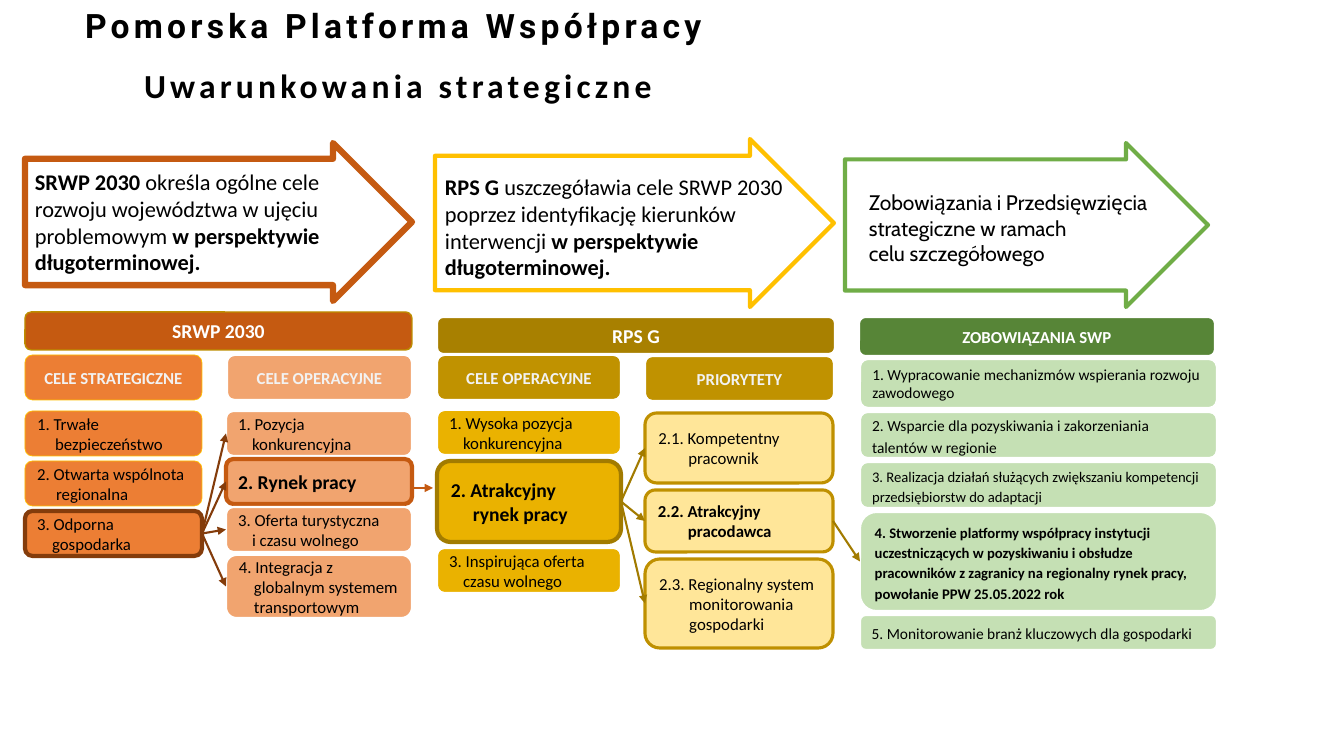
from lxml import etree
from pptx import Presentation
from pptx.dml.color import RGBColor
from pptx.enum.shapes import MSO_CONNECTOR, MSO_SHAPE
from pptx.enum.text import MSO_ANCHOR, MSO_AUTO_SIZE, PP_ALIGN
from pptx.oxml.ns import qn
from pptx.util import Pt

ROUNDED, ARROW = MSO_SHAPE.ROUNDED_RECTANGLE, MSO_SHAPE.RIGHT_ARROW
STRAIGHT = MSO_CONNECTOR.STRAIGHT
MIDDLE, TOP = MSO_ANCHOR.MIDDLE, MSO_ANCHOR.TOP
LEFT, CENTER = PP_ALIGN.LEFT, PP_ALIGN.CENTER
NO_FIT = MSO_AUTO_SIZE.NONE
RIGHT_SITE, LEFT_SITE = 3, 1

COLORS = {
    "white": "FFFFFF", "black": "000000", "pale": "F2F2F2",
    "rust": "C55A11", "brown": "843C0B", "orange": "EC7E34", "peach": "F1A46F",
    "amber": "FFC000", "olive": "BD8E00", "bronze": "A88000", "gold": "C09200",
    "yellow": "EAB200", "mustard": "A27B00", "cream": "FFE699", "ochre": "BF9000",
    "green": "70AD47", "forest": "578537", "mint": "C5E0B4",
}

# Double asterisks mark bold spans; a newline inside a text is a line break.
TITLE_LINES = [("Pomorska Platforma Współpracy", "Roboto", 0),
               ("Uwarunkowania strategiczne", "Calibri", 59)]

# arrow frame, line colour, line width, text frame, text, text format
ARROWS = [
    ((25, 143, 387, 158), "rust", 4.5, (25, 163, 347, 119),
     "**SRWP 2030 **określa ogólne cele rozwoju województwa w ujęciu problemowym "
     "**w perspektywie długoterminowej.**", {"size": 16}),
    ((435, 139, 399, 168), "amber", 3, (435, 168, 371, 119),
     "**RPS G** uszczegóławia cele SRWP 2030 poprzez identyfikację kierunków "
     "interwencji **w perspektywie długoterminowej.**", {"size": 16}),
    ((845, 143, 363, 164), "green", 3, (859, 185, 356, 87),
     "Zobowiązania i Przedsięwzięcia \nstrategiczne w ramach \ncelu szczegółowego",
     {"size": 15, "font": "Cabin"}),
]

# frame, text, fill, line colour, line width, size, text colour
HEADERS = [
    ((25, 312, 387, 38), "SRWP 2030", "rust", "olive", 1, 14, "white"),
    ((437, 317, 398, 37), "RPS G", "bronze", "white", 1.5, 14, "white"),
    ((859, 317, 356, 39), "ZOBOWIĄZANIA SWP", "forest", "white", 1.5, 12, "white"),
    ((25, 355, 177, 45), "CELE STRATEGICZNE", "orange", "amber", 0.5, 12, "pale"),
    ((227, 355, 185, 45), "CELE OPERACYJNE", "peach", "white", 1.5, 12, "pale"),
    ((437, 355, 184, 45), "CELE OPERACYJNE", "gold", "white", 1.5, 12, "pale"),
    ((645, 356, 189, 45), "PRIORYTETY", "gold", "white", 1.5, 12, "pale"),
]

# Each item: height, lines, indent of the lines after the first, own format
COLUMNS = {
    "strategic": {
        "left": 25, "top": 411, "width": 177, "gap": 5,
        "fill": "orange", "line": "amber", "weight": 0.5, "format": {"size": 12},
        "items": [
            (45, ["1. Trwałe", "bezpieczeństwo"], 18, {}),
            (45, ["2. Otwarta wspólnota", "regionalna"], 19, {}),
            (45, ["3. Odporna", "gospodarka"], 15, {"line": "brown", "weight": 3}),
        ]},
    "operational": {
        "left": 226, "top": 411, "width": 186, "gap": 3,
        "fill": "peach", "line": "white", "weight": 1.5, "format": {"size": 12},
        "items": [
            (45, ["1. Pozycja", "konkurencyjna"], 14, {}),
            (45, ["**2. Rynek pracy**"], 0, {"line": "rust", "weight": 3, "size": 14}),
            (45, ["3. Oferta turystyczna", "i czasu wolnego"], 14, {}),
            (63, ["4. Integracja z", "globalnym systemem", "transportowym"], 15, {}),
        ]},
    "programme": {
        "left": 437, "top": 410, "width": 184, "gap": 6,
        "fill": "yellow", "line": "white", "weight": 1.5, "format": {"size": 12},
        "items": [
            (45, ["1. Wysoka pozycja", "konkurencyjna"], 14, {}),
            (81, ["**2. Atrakcyjny**", "**rynek pracy**"], 22,
             {"line": "mustard", "weight": 3, "size": 14}),
            (45, ["3. Inspirująca oferta", "czasu wolnego"], 14, {}),
        ]},
    "priorities": {
        "left": 645, "top": 413, "width": 188, "gap": 7,
        "fill": "cream", "line": "ochre", "weight": 2.25, "format": {"size": 12},
        "items": [
            (70, ["2.1. Kompetentny", "pracownik"], 30, {}),
            (62, ["**2.2. Atrakcyjny**", "**pracodawca**"], 30, {}),
            (89, ["2.3. Regionalny system", "monitorowania", "gospodarki"], 30, {}),
        ]},
    "commitments": {
        "left": 860, "top": 359, "width": 357, "gap": 4,
        "fill": "mint", "line": "white", "weight": 1.5,
        "format": {"size": 11, "spacing": 1.15},
        "items": [
            (49, ["1. Wypracowanie mechanizmów wspierania rozwoju zawodowego"], 0,
             {"spacing": 1}),
            (46, ["2. Wsparcie dla pozyskiwania i zakorzeniania talentów w regionie"], 0, {}),
            (46, ["3. Realizacja działań służących zwiększaniu kompetencji "
                  "przedsiębiorstw do adaptacji"], 0, {"size": 10.5}),
            (99, ["**4. Stworzenie platformy współpracy instytucji uczestniczących w "
                  "pozyskiwaniu i obsłudze pracowników z zagranicy na regionalny rynek "
                  "pracy,\npowołanie PPW 25.05.2022 rok**"], 0, {"size": 10.5}),
            (35, ["5. Monitorowanie branż kluczowych dla gospodarki"], 0, {}),
        ]},
}

# source column and item, target column and items, colour
LINKS = [
    ("strategic", 2, "operational", (0, 1, 2, 3), "brown"),
    ("programme", 1, "priorities", (0, 1, 2), "mustard"),
    ("priorities", 1, "commitments", (3,), "mustard"),
]
PROGRAMME_LINK = (413, 488, 433, 488)


def px(length):
    return round(length * 914400 / 100.8)


def color(name):
    return RGBColor.from_string(COLORS[name])


def frame_of(values):
    return [px(value) for value in values]


def write(box, lines, size, font="Calibri", ink="black", align=LEFT, anchor=MIDDLE,
          spacing=1, hang=0):
    frame = box.text_frame
    for name, value in {"word_wrap": True, "auto_size": NO_FIT,
                        "vertical_anchor": anchor}.items():
        setattr(frame, name, value)
    for number, line in enumerate(lines):
        para = frame.add_paragraph() if number else frame.paragraphs[0]
        para.alignment, para.line_spacing = align, spacing
        if number and hang:
            para._p.get_or_add_pPr().set("marL", str(px(hang)))
        for order, chunk in enumerate(line.split("**")):
            for row, piece in enumerate(chunk.split("\n")):
                if row:
                    para.add_line_break()
                if piece:
                    span = para.add_run()
                    span.text = piece
                    style(span, size, font, ink, order % 2 == 1)


def style(span, size, font, ink, bold):
    for name, value in {"size": Pt(size), "name": font, "bold": bold}.items():
        setattr(span.font, name, value)
    span.font.color.rgb = color(ink)


def draw_shape(page, kind, frame, fill, line, weight):
    shape = page.shapes.add_shape(kind, *frame_of(frame))
    shape.shadow.inherit = False
    shape.fill.solid()
    shape.fill.fore_color.rgb = color(fill)
    shape.line.color.rgb = color(line)
    shape.line.width = Pt(weight)
    return shape


def draw_link(page, ends, line):
    link = page.shapes.add_connector(STRAIGHT, *frame_of(ends))
    link.line.color.rgb = color(line)
    link.line.width = Pt(1.5)
    etree.SubElement(link.line._get_or_add_ln(), qn("a:tailEnd"), type="triangle")
    etree.SubElement(link._element.spPr, qn("a:effectLst"))
    return link


def draw_title(page):
    title = page.shapes.title
    title.left, title.top, title.width, title.height = frame_of((75, -4, 1193, 98))
    frame = title.text_frame
    frame.auto_size, frame.vertical_anchor = NO_FIT, MIDDLE
    for number, (text, font, indent) in enumerate(TITLE_LINES):
        para = frame.add_paragraph() if number else frame.paragraphs[0]
        para.alignment, para.line_spacing = LEFT, 1.5
        para._p.get_or_add_pPr().set("marL", str(px(indent)))
        span = para.add_run()
        span.text = text
        style(span, 24, font, "black", True)
        span._r.get_or_add_rPr().set("spc", "300")


def draw_column(page, column):
    boxes, top = [], column["top"]
    for height, lines, hang, own in column["items"]:
        look = {**column["format"], **own}
        line = look.pop("line", column["line"])
        weight = look.pop("weight", column["weight"])
        box = draw_shape(page, ROUNDED, (column["left"], top, column["width"], height),
                         column["fill"], line, weight)
        write(box, lines, hang=hang, **look)
        boxes.append(box)
        top += height + column["gap"]
    return boxes


def main():
    deck = Presentation()
    deck.slide_width, deck.slide_height = px(1344), px(756)
    page = deck.slides.add_slide(deck.slide_layouts[5])
    draw_title(page)
    for frame, line, weight, text_frame, text, look in ARROWS:
        arrow = draw_shape(page, ARROW, frame, "white", line, weight)
        arrow.adjustments[0], arrow.adjustments[1] = 0.8, 0.5
        write(page.shapes.add_textbox(*frame_of(text_frame)), [text], anchor=TOP, **look)
    for frame, text, fill, line, weight, size, ink in HEADERS:
        box = draw_shape(page, ROUNDED, frame, fill, line, weight)
        write(box, [f"**{text}**"], size, ink=ink, align=CENTER)
    boxes = {name: draw_column(page, column) for name, column in COLUMNS.items()}
    for source, start, target, ends, line in LINKS:
        for end in ends:
            link = draw_link(page, (0, 0, 0, 0), line)
            link.begin_connect(boxes[source][start], RIGHT_SITE)
            link.end_connect(boxes[target][end], LEFT_SITE)
    draw_link(page, PROGRAMME_LINK, "rust")
    deck.save("out.pptx")


if __name__ == "__main__":
    main()
